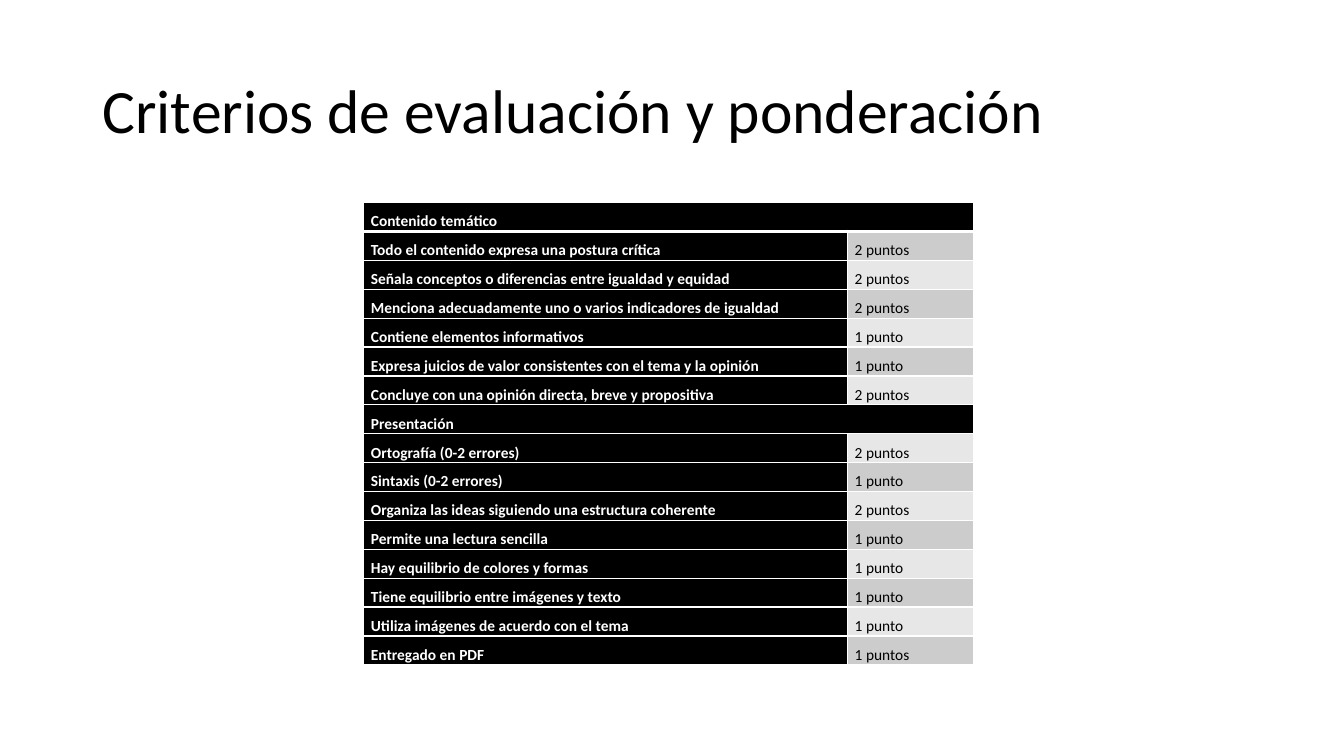
from lxml.etree import SubElement
from pptx import Presentation
from pptx.dml.color import RGBColor
from pptx.enum.text import MSO_ANCHOR as Anchor
from pptx.oxml.ns import qn
from pptx.util import Emu, Pt

PX = 3048  # 300 px to the inch
COLORS = {"black": "000000", "white": "FFFFFF", "dark band": "CCCCCC", "light band": "E7E7E7"}
CRITERIA = [
    ("Contenido temático", None),
    ("Todo el contenido expresa una postura crítica", "2 puntos"),
    ("Señala conceptos o diferencias entre igualdad y equidad", "2 puntos"),
    ("Menciona adecuadamente uno o varios indicadores de igualdad", "2 puntos"),
    ("Contiene elementos informativos", "1 punto"),
    ("Expresa juicios de valor consistentes con el tema y la opinión", "1 punto"),
    ("Concluye con una opinión directa, breve y propositiva", "2 puntos"),
    ("Presentación", None),
    ("Ortografía (0-2 errores)", "2 puntos"),
    ("Sintaxis (0-2 errores)", "1 punto"),
    ("Organiza las ideas siguiendo una estructura coherente", "2 puntos"),
    ("Permite una lectura sencilla", "1 punto"),
    ("Hay equilibrio de colores y formas", "1 punto"),
    ("Tiene equilibrio entre imágenes y texto", "1 punto"),
    ("Utiliza imágenes de acuerdo con el tema", "1 punto"),
    ("Entregado en PDF", "1 puntos"),
]
COLUMN_WIDTHS = (1440, 375)
ROW_HEIGHT = 86


def write(frame, text, size=11, color="black", bold=False, spacing=1.5):
    para = frame.paragraphs[0]
    para.line_spacing = spacing
    span = para.add_run()
    span.text = text
    span.font.name = "Calibri"
    span.font.size = Pt(size)
    span.font.bold = bold
    span.font.color.rgb = RGBColor.from_string(COLORS[color])


def style_cell(cell, fill, bottom=1):
    """Set margins, white borders (widths in points) and fill of a table cell."""
    cell.margin_left = cell.margin_right = Emu(21 * PX)
    cell.margin_top = cell.margin_bottom = 0
    props = cell._tc.get_or_add_tcPr()
    for side, width in (("L", 1), ("R", 1), ("T", 1), ("B", bottom)):
        line = SubElement(props, qn(f"a:ln{side}"), w=str(Pt(width)))
        solid = SubElement(line, qn("a:solidFill"))
        SubElement(solid, qn("a:srgbClr"), val=COLORS["white"])
    cell.fill.solid()
    cell.fill.fore_color.rgb = RGBColor.from_string(COLORS[fill])


deck = Presentation()
deck.slide_width, deck.slide_height = Emu(4000 * PX), Emu(2250 * PX)
page = deck.slides.add_slide(deck.slide_layouts[6])

title = page.shapes.add_textbox(*(Emu(n * PX) for n in (276, 120, 3450, 435))).text_frame
title.word_wrap = True
title.vertical_anchor = Anchor.MIDDLE
write(title, "Criterios de evaluación y ponderación", size=44, spacing=0.9)

table_box = (1083, 603, sum(COLUMN_WIDTHS), ROW_HEIGHT * len(CRITERIA))
table = page.shapes.add_table(len(CRITERIA), 2, *(Emu(n * PX) for n in table_box)).table
for column, width in zip(table.columns, COLUMN_WIDTHS):
    column.width = Emu(width * PX)

for index, (criterion, points) in enumerate(CRITERIA):
    table.rows[index].height = Emu(ROW_HEIGHT * PX)
    label, score = table.cell(index, 0), table.cell(index, 1)
    bottom = 3 if index == 0 else 1
    style_cell(label, "black", bottom)
    write(label.text_frame, criterion, color="white", bold=True)
    if points:
        style_cell(score, "dark band" if index % 2 else "light band")
        write(score.text_frame, points)
    else:
        style_cell(score, "black", bottom)
        label.merge(score)

deck.save("out.pptx")
